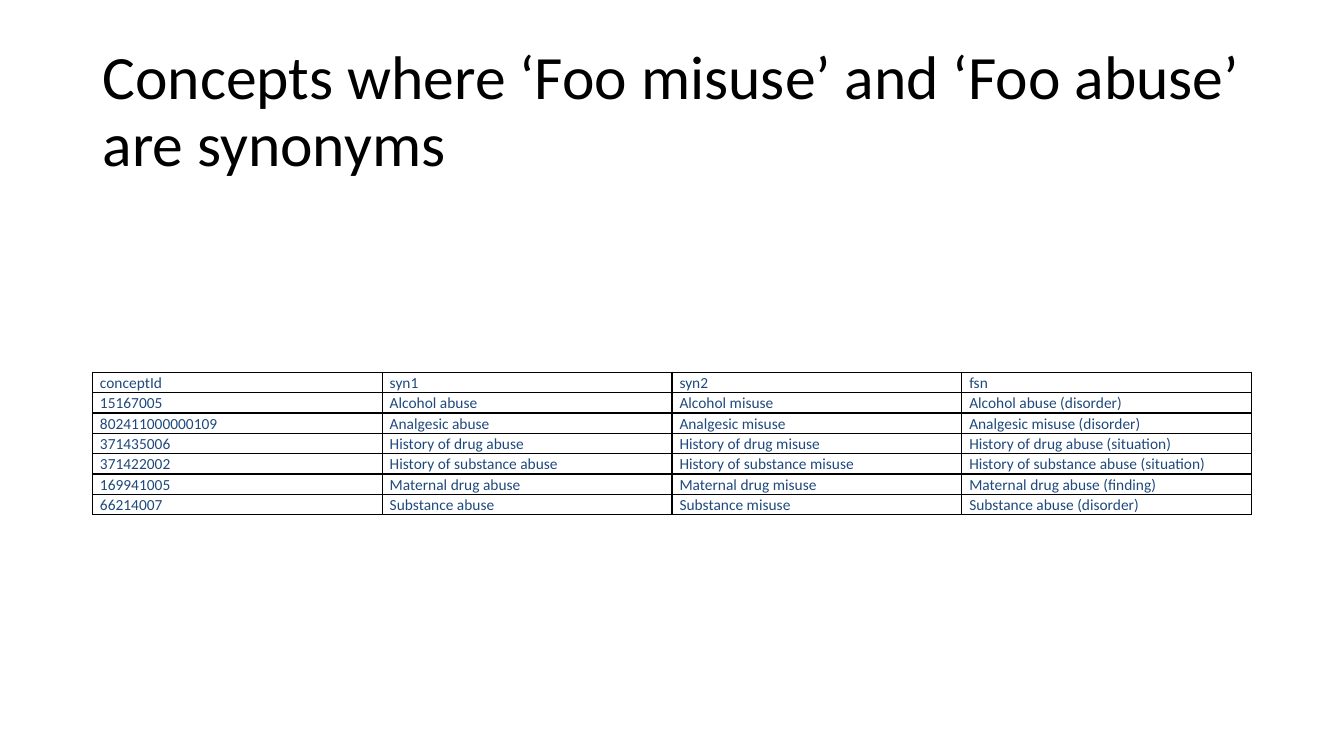
from dataclasses import dataclass

from lxml.etree import SubElement
from pptx import Presentation
from pptx.dml.color import RGBColor
from pptx.enum.text import MSO_ANCHOR, MSO_AUTO_SIZE, PP_ALIGN
from pptx.oxml.ns import qn
from pptx.util import Cm, Pt


@dataclass(frozen=True)
class Theme:
    font: str = "Calibri"
    title_color: str = "000000"
    cell_color: str = "1F497D"
    border_color: str = "000000"
    title_size: int = 44
    cell_size: int = 11
    border_width: int = 1


THEME = Theme()
TITLE = "Concepts where ‘Foo misuse’ and ‘Foo abuse’ are synonyms"
CONCEPTS = [
    ("conceptId", "syn1", "syn2", "fsn"),
    ("15167005", "Alcohol abuse", "Alcohol misuse", "Alcohol abuse (disorder)"),
    ("802411000000109", "Analgesic abuse", "Analgesic misuse",
     "Analgesic misuse (disorder)"),
    ("371435006", "History of drug abuse", "History of drug misuse",
     "History of drug abuse (situation)"),
    ("371422002", "History of substance abuse", "History of substance misuse",
     "History of substance abuse (situation)"),
    ("169941005", "Maternal drug abuse", "Maternal drug misuse",
     "Maternal drug abuse (finding)"),
    ("66214007", "Substance abuse", "Substance misuse",
     "Substance abuse (disorder)"),
]


def add_run(p, text, size, color):
    r = p.add_run()
    r.text = text
    r.font.name = THEME.font
    r.font.size = Pt(size)
    r.font.bold = False
    r.font.color.rgb = RGBColor.from_string(color)


def set_borders(cell):
    tc_pr = cell._tc.get_or_add_tcPr()
    for i, side in enumerate(("lnL", "lnR", "lnT", "lnB")):
        ln = tc_pr.makeelement(qn(f"a:{side}"), {"w": str(Pt(THEME.border_width))})
        fill = SubElement(ln, qn("a:solidFill"))
        SubElement(fill, qn("a:srgbClr"), val=THEME.border_color)
        tc_pr.insert(i, ln)  # borders come before the fill


def fill_cell(cell, text):
    cell.fill.background()
    set_borders(cell)
    cell.margin_left = cell.margin_right = Cm(0.19)
    cell.margin_top = cell.margin_bottom = 0
    p = cell.text_frame.paragraphs[0]
    p.line_spacing = 1.07
    add_run(p, text, THEME.cell_size, THEME.cell_color)


def place_title(s, left, top, width, height):
    sp = s.shapes.title
    sp.left, sp.top, sp.width, sp.height = left, top, width, height
    tf = sp.text_frame
    tf.word_wrap = True
    tf.auto_size = MSO_AUTO_SIZE.NONE
    tf.vertical_anchor = MSO_ANCHOR.MIDDLE
    p = tf.paragraphs[0]
    p.alignment = PP_ALIGN.LEFT
    p.line_spacing = 0.9
    add_run(p, TITLE, THEME.title_size, THEME.title_color)


def place_concept_table(s, left, top, width, height):
    table = s.shapes.add_table(len(CONCEPTS), len(CONCEPTS[0]),
                               left, top, width, height).table
    table.first_row = table.horz_banding = False
    for i, row in enumerate(CONCEPTS):
        for j, text in enumerate(row):
            fill_cell(table.cell(i, j), text)


def main():
    prs = Presentation()
    prs.slide_width, prs.slide_height = Cm(33.87), Cm(19.05)
    s = prs.slides.add_slide(prs.slide_layouts[5])

    # Title and table share the same side margins
    left = Cm(2.33)
    width = prs.slide_width - 2 * left
    place_title(s, left, Cm(1.01), width, Cm(3.68))
    place_concept_table(s, left, Cm(9.38), width, Cm(3.48))

    prs.save("out.pptx")


if __name__ == "__main__":
    main()
